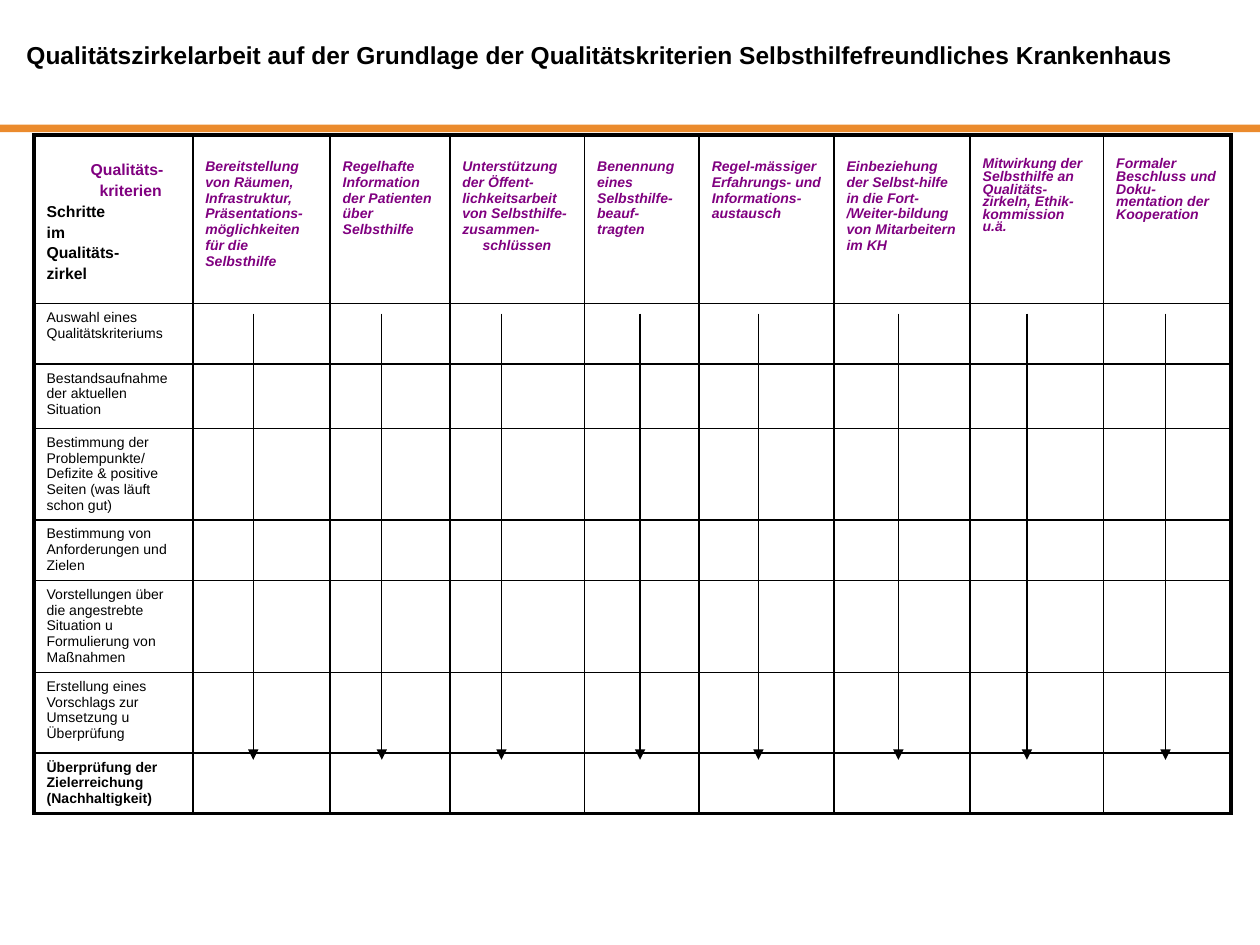
from lxml import etree
from pptx import Presentation
from pptx.dml.color import RGBColor
from pptx.enum.shapes import MSO_CONNECTOR, MSO_SHAPE
from pptx.enum.text import MSO_ANCHOR, MSO_AUTO_SIZE, PP_ALIGN
from pptx.oxml.ns import qn
from pptx.util import Inches, Pt

RECTANGLE = MSO_SHAPE.RECTANGLE
STRAIGHT = MSO_CONNECTOR.STRAIGHT
MIDDLE = MSO_ANCHOR.MIDDLE
LEFT = PP_ALIGN.LEFT
NO_AUTOFIT = MSO_AUTO_SIZE.NONE

BLACK = RGBColor(0x00, 0x00, 0x00)
PURPLE = RGBColor(0x80, 0x00, 0x80)
ORANGE = RGBColor(0xEB, 0x8B, 0x2D)

TITLE_FORMAT = {"name": "Arial", "size": Pt(14), "bold": True}
CRITERION_FORMAT = {"name": "Arial", "size": Pt(8), "bold": True, "italic": True}
CORNER_FORMAT = {"name": "Arial", "size": Pt(9), "bold": True}
STEP_FORMAT = {"name": "Arial", "size": Pt(8), "bold": False}
LAST_STEP_FORMAT = {**STEP_FORMAT, "bold": True}

TITLE = ("Qualitätszirkelarbeit auf der Grundlage der Qualitätskriterien "
         "Selbsthilfefreundliches Krankenhaus")
COLUMN_WIDTHS = [1.26, 1.09, 0.95, 1.07, 0.91, 1.07, 1.08, 1.06, 1.01]
ROW_HEIGHTS = [1.34, 0.48, 0.51, 0.72, 0.48, 0.73, 0.64, 0.48]
ARROW_POSITIONS = [2.01, 3.03, 3.98, 5.08, 6.02, 7.13, 8.15, 9.25]

# Lines of the corner cell: text, indent in inches, colour
CORNER_LINES = [
    ("Qualitäts-", 0.35, PURPLE),
    ("kriterien", 0.42, PURPLE),
    ("Schritte", 0, BLACK),
    ("im", 0, BLACK),
    ("Qualitäts-", 0, BLACK),
    ("zirkel", 0, BLACK),
]
# Each criterion: lines of text with indent in inches, line spacing
CRITERIA = [
    ([("Bereitstellung von Räumen, Infrastruktur, Präsentations-möglichkeiten "
       "für die Selbsthilfe", 0)], 1.0),
    ([("Regelhafte Information der Patienten über Selbsthilfe", 0)], 1.0),
    ([("Unterstützung der Öffent-lichkeitsarbeit von Selbsthilfe-zusammen-", 0),
      ("schlüssen", 0.16)], 1.0),
    ([("Benennung eines Selbsthilfe-beauf- tragten", 0)], 1.0),
    ([("Regel-mässiger Erfahrungs- und Informations-austausch", 0)], 1.0),
    ([("Einbeziehung der Selbst-hilfe in die Fort- /Weiter-bildung von "
       "Mitarbeitern im KH", 0)], 1.0),
    ([("Mitwirkung der Selbsthilfe an Qualitäts-zirkeln, Ethik-kommission u.ä.", 0)], 0.8),
    ([("Formaler Beschluss und Doku-mentation der Kooperation", 0)], 0.8),
]
STEPS = [
    "Auswahl eines Qualitätskriteriums",
    "Bestandsaufnahme der aktuellen Situation",
    "Bestimmung der Problempunkte/ Defizite & positive Seiten (was läuft schon gut)",
    "Bestimmung von Anforderungen und Zielen",
    "Vorstellungen über die angestrebte Situation u Formulierung von Maßnahmen",
    "Erstellung eines Vorschlags zur Umsetzung u Überprüfung",
    "Überprüfung der Zielerreichung (Nachhaltigkeit)",
]


def add_span(para, text, formats, color):
    span = para.add_run()
    span.text = text
    for name, value in formats.items():
        setattr(span.font, name, value)
    span.font.color.rgb = color


def write_cell(cell, lines, formats, space_before=0, line_spacing=None):
    """Write one paragraph for each (text, indent, colour) line."""
    for index, (text, indent, color) in enumerate(lines):
        frame = cell.text_frame
        para = frame.add_paragraph() if index else frame.paragraphs[0]
        if index:
            para.space_before = Pt(space_before)
        if line_spacing:
            para.line_spacing = line_spacing
        if indent:
            para._p.get_or_add_pPr().set("marL", str(Inches(indent)))
        add_span(para, text, formats, color)


def set_border(cell, side, points):
    line = etree.SubElement(cell._tc.get_or_add_tcPr(), qn(f"a:ln{side}"), w=str(Pt(points)))
    fill = etree.SubElement(line, qn("a:solidFill"))
    etree.SubElement(fill, qn("a:srgbClr"), val=str(BLACK))


def format_grid(table):
    """Draw thin inner lines and a thick outer frame, without fills."""
    last_row, last_column = len(table.rows) - 1, len(table.columns) - 1
    for r in range(last_row + 1):
        for c in range(last_column + 1):
            cell = table.cell(r, c)
            outer = {"L": c == 0, "R": c == last_column, "T": r == 0, "B": r == last_row}
            for side, is_outer in outer.items():
                set_border(cell, side, 2.25 if is_outer else 1)
            cell.fill.background()


def add_title(page):
    title = page.shapes.title
    title.left, title.top = Inches(0), Inches(0.21)
    title.width, title.height = Inches(9.8), Inches(0.67)
    frame = title.text_frame
    frame.auto_size = NO_AUTOFIT
    frame.word_wrap = True
    frame.vertical_anchor = MIDDLE
    frame.margin_left = Inches(0.21)
    frame.margin_bottom = Inches(0.27)
    para = frame.paragraphs[0]
    para.alignment = LEFT
    add_span(para, TITLE, TITLE_FORMAT, BLACK)


def add_rule(page):
    rule = page.shapes.add_shape(RECTANGLE, Inches(0), Inches(0.99), Inches(10), Inches(0.06))
    rule.shadow.inherit = False
    rule.fill.solid()
    rule.fill.fore_color.rgb = ORANGE
    rule.line.fill.background()


def add_matrix(page):
    table = page.shapes.add_table(
        len(ROW_HEIGHTS), len(COLUMN_WIDTHS), Inches(0.27), Inches(1.07),
        Inches(sum(COLUMN_WIDTHS)), Inches(sum(ROW_HEIGHTS))).table
    table.first_row = False
    table.horz_banding = False
    for column, width in zip(table.columns, COLUMN_WIDTHS):
        column.width = Inches(width)
    for row, height in zip(table.rows, ROW_HEIGHTS):
        row.height = Inches(height)
    format_grid(table)

    corner = table.cell(0, 0)
    corner.margin_top = Inches(0.21)
    write_cell(corner, CORNER_LINES, CORNER_FORMAT, space_before=1.8)
    for c, (lines, spacing) in enumerate(CRITERIA, start=1):
        cell = table.cell(0, c)
        cell.margin_top = Inches(0.19)
        colored = [(text, indent, PURPLE) for text, indent in lines]
        write_cell(cell, colored, CRITERION_FORMAT, line_spacing=spacing)
    for r, step in enumerate(STEPS, start=1):
        formats = LAST_STEP_FORMAT if r == len(STEPS) else STEP_FORMAT
        write_cell(table.cell(r, 0), [(step, 0, BLACK)], formats)


def add_down_arrow(page, x):
    arrow = page.shapes.add_connector(STRAIGHT, Inches(x), Inches(2.49), Inches(x), Inches(6.03))
    arrow.line.color.rgb = BLACK
    arrow.line.width = Pt(0.75)
    etree.SubElement(arrow.line._get_or_add_ln(), qn("a:tailEnd"), type="triangle")
    etree.SubElement(arrow._element.spPr, qn("a:effectLst"))


def main():
    deck = Presentation()
    deck.slide_width, deck.slide_height = Inches(10), Inches(7.5)
    page = deck.slides.add_slide(deck.slide_layouts[5])
    add_rule(page)
    add_title(page)
    add_matrix(page)
    for x in ARROW_POSITIONS:
        add_down_arrow(page, x)
    deck.save("out.pptx")


if __name__ == "__main__":
    main()
